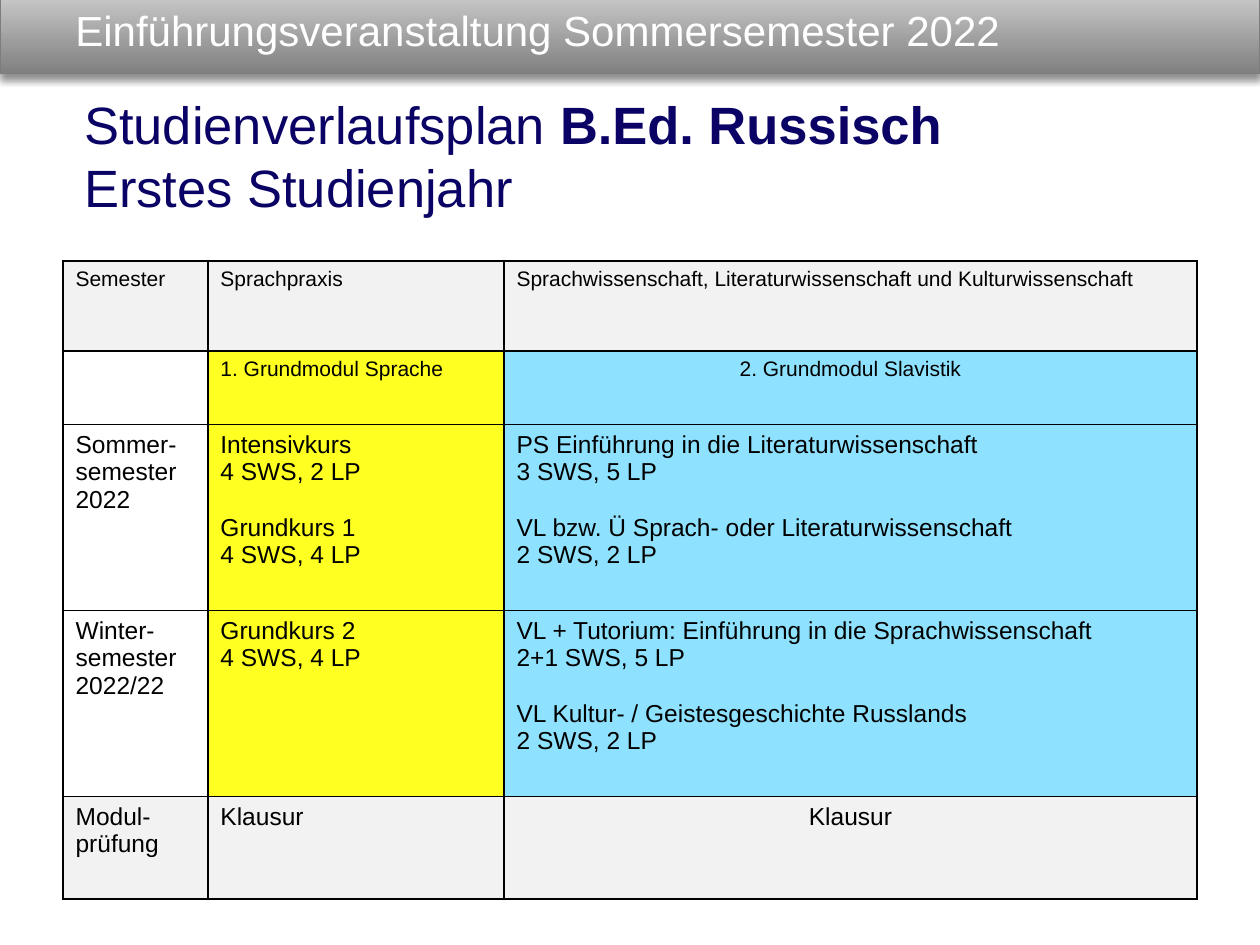
from lxml.etree import SubElement
from pptx import Presentation
from pptx.dml.color import RGBColor
from pptx.enum.shapes import MSO_SHAPE
from pptx.enum.text import MSO_ANCHOR, PP_ALIGN
from pptx.oxml.ns import qn
from pptx.util import Cm, Pt

COLORS = {
    "white": "FFFFFF", "black": "000000", "navy": "0A0365",
    "band_dark": "808080", "band_light": "CDCDCD", "band_edge": "7D7D7D",
    "grey": "F2F2F2", "yellow": "FFFF21", "blue": "8FE2FF",
}
COLUMN_WIDTHS = [2.92, 5.97, 13.97]
ROW_HEIGHTS = [1.82, 1.48, 3.75, 3.75, 2.06]
ROW_SIZES = [12, 12, 14, 14, 14]
ROW_FILLS = [["grey"] * 3] + [[None, "yellow", "blue"]] * 3 + [["grey"] * 3]
CENTERED = {(1, 2), (4, 2)}
# Each cell is a list of blocks; a block is a list of paragraphs.
PLAN = [
    [[["Semester"]], [["Sprachpraxis"]],
     [["Sprachwissenschaft, Literaturwissenschaft und Kulturwissenschaft"]]],
    [[], [["1. Grundmodul Sprache"]], [["2. Grundmodul Slavistik"]]],
    [[["Sommer-semester 2022"]],
     [["Intensivkurs", "4 SWS, 2 LP"], ["Grundkurs 1", "4 SWS, 4 LP"]],
     [["PS Einführung in die Literaturwissenschaft", "3 SWS, 5 LP"],
      ["VL bzw. Ü Sprach- oder Literaturwissenschaft", "2 SWS, 2 LP"]]],
    [[["Winter-semester", "2022/22"]],
     [["Grundkurs 2", "4 SWS, 4 LP"]],
     [["VL + Tutorium: Einführung in die Sprachwissenschaft", "2+1 SWS, 5 LP"],
      ["VL Kultur- / Geistesgeschichte Russlands", "2 SWS, 2 LP"]]],
    [[["Modul-prüfung"]], [["Klausur"]], [["Klausur"]]],
]


def color(name):
    return RGBColor.from_string(COLORS[name])


def add_span(para, text, size, ink, bold=False):
    span = para.add_run()
    span.text = text
    formats = {"name": "Arial", "size": Pt(size), "bold": bold}
    for key, value in formats.items():
        setattr(span.font, key, value)
    span.font.color.rgb = color(ink)


def add_shadow(shape):
    effects = SubElement(shape._element.spPr, qn("a:effectLst"))
    shadow = SubElement(effects, qn("a:outerShdw"), blurRad=str(Pt(4)),
                        dist=str(Pt(3)), dir="5400000", rotWithShape="0")
    tint = SubElement(shadow, qn("a:srgbClr"), val=COLORS["black"])
    SubElement(tint, qn("a:alpha"), val="43000")


def add_text_box(page, left, top, width, height, anchor):
    frame = page.shapes.add_textbox(Cm(left), Cm(top), Cm(width), Cm(height)).text_frame
    frame.word_wrap = True
    frame.vertical_anchor = anchor
    return frame.paragraphs[0]


def add_header(page, left, top, width, height):
    band = page.shapes.add_shape(MSO_SHAPE.RECTANGLE, Cm(left), Cm(top), Cm(width), Cm(height))
    band.fill.gradient()
    band.fill.gradient_angle = 90
    for stop, position, name in zip(band.fill.gradient_stops, (0, 1), ("band_dark", "band_light")):
        stop.position = position
        stop.color.rgb = color(name)
    band.line.color.rgb = color("band_edge")
    band.line.width = Pt(0.75)
    add_shadow(band)
    para = add_text_box(page, left + 1.27, top + 0.2, width - 1.85, 1.2, MSO_ANCHOR.MIDDLE)
    add_span(para, "Einführungsveranstaltung Sommersemester 2022", 24, "white")


def add_heading(page, left, top, width, height):
    para = add_text_box(page, left, top, width, height, MSO_ANCHOR.TOP)
    add_span(para, "Studienverlaufsplan ", 30, "navy")
    add_span(para, "B.Ed. Russisch", 30, "navy", bold=True)
    para.add_line_break()
    add_span(para, "Erstes Studienjahr", 30, "navy")


def add_borders(cell):
    """Frame a cell; the border elements must precede its fill."""
    properties = cell._tc.get_or_add_tcPr()
    for side in ("lnL", "lnR", "lnT", "lnB"):
        line = SubElement(properties, qn(f"a:{side}"), w=str(Pt(1)))
        SubElement(SubElement(line, qn("a:solidFill")), qn("a:srgbClr"), val=COLORS["black"])


def fill_cell(cell, blocks, size, fill, align):
    add_borders(cell)
    if fill:
        cell.fill.solid()
        cell.fill.fore_color.rgb = color(fill)
    else:
        cell.fill.background()
    frame = cell.text_frame
    for block_index, block in enumerate(blocks):
        for line_index, text in enumerate(block):
            first = block_index == line_index == 0
            para = frame.paragraphs[0] if first else frame.add_paragraph()
            para.alignment = align
            if block_index and line_index == 0:
                para.space_before = Pt(16)
            add_span(para, text, size, "black")


def add_plan(page, left, top):
    table = page.shapes.add_table(
        len(ROW_HEIGHTS), len(COLUMN_WIDTHS), Cm(left), Cm(top),
        Cm(sum(COLUMN_WIDTHS)), Cm(sum(ROW_HEIGHTS))).table
    table.first_row = table.horz_banding = False
    for column, width in zip(table.columns, COLUMN_WIDTHS):
        column.width = Cm(width)
    for r, height in enumerate(ROW_HEIGHTS):
        table.rows[r].height = Cm(height)
        for c, blocks in enumerate(PLAN[r]):
            align = PP_ALIGN.CENTER if (r, c) in CENTERED else PP_ALIGN.LEFT
            fill_cell(table.cell(r, c), blocks, ROW_SIZES[r], ROW_FILLS[r][c], align)


def main():
    deck = Presentation()
    deck.slide_width, deck.slide_height = Cm(25.4), Cm(19.05)
    page = deck.slides.add_slide(deck.slide_layouts[6])
    add_header(page, 0, -0.2, 25.4, 1.68)
    add_plan(page, 1.27, 5.26)
    add_heading(page, 1.45, 1.73, 22.05, 2.8)
    deck.save("out.pptx")


if __name__ == "__main__":
    main()
